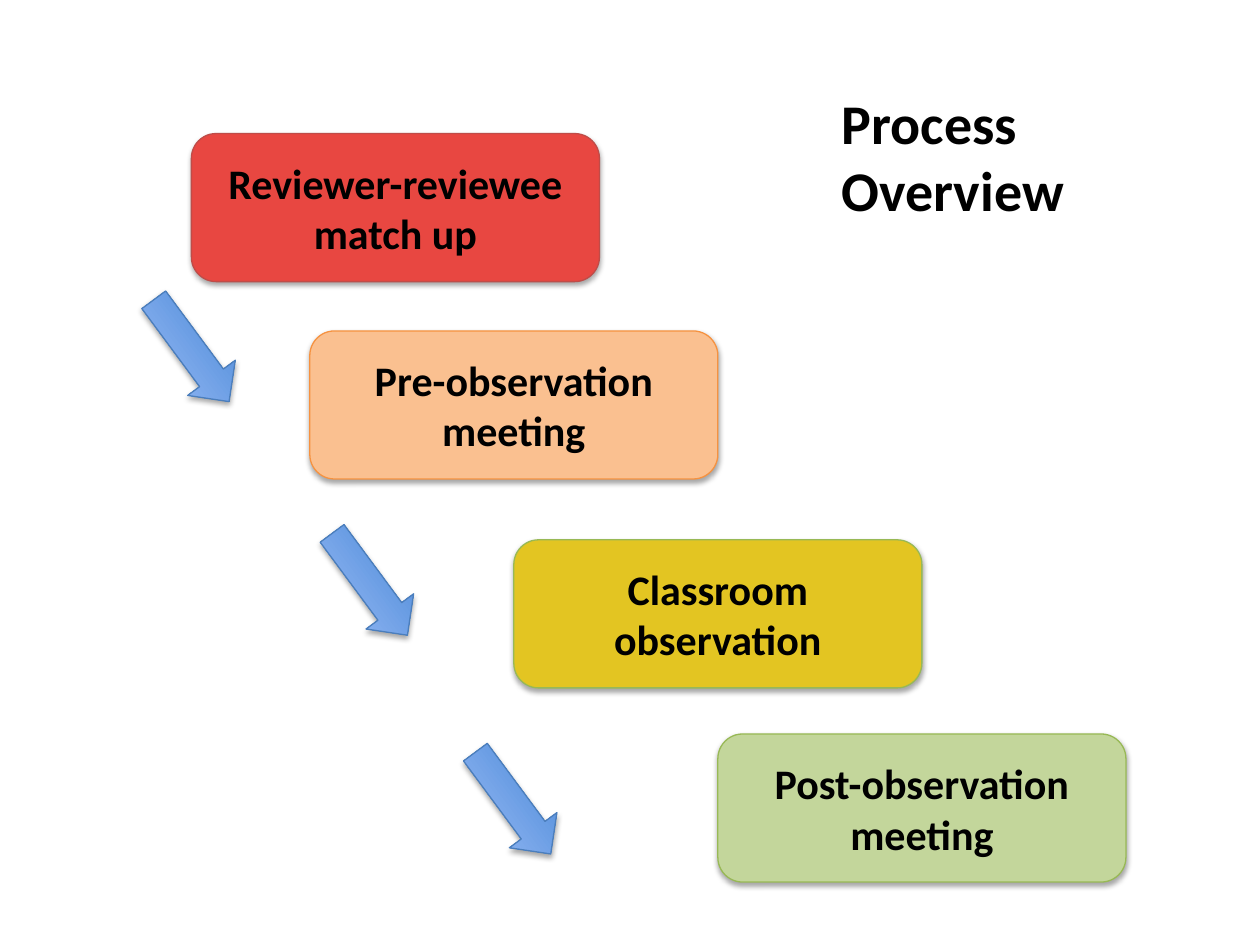
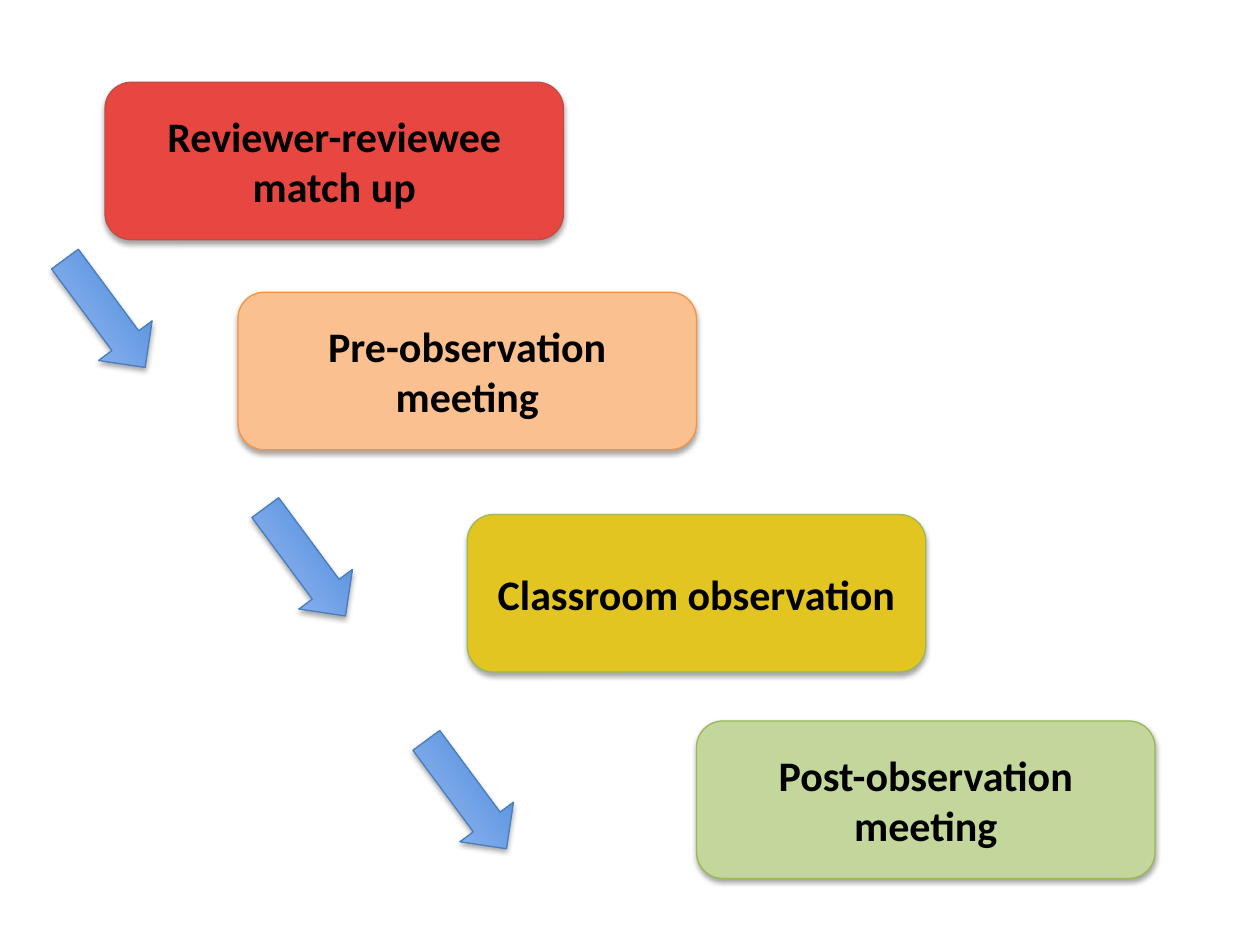
from dataclasses import dataclass

from lxml import etree
from pptx import Presentation
from pptx.dml.color import RGBColor
from pptx.enum.shapes import MSO_SHAPE
from pptx.enum.text import MSO_ANCHOR, PP_ALIGN
from pptx.oxml.ns import qn
from pptx.util import Pt

BOX = MSO_SHAPE.FLOWCHART_ALTERNATE_PROCESS
ARROW = MSO_SHAPE.LEFT_ARROW
CENTER = PP_ALIGN.CENTER
MIDDLE = MSO_ANCHOR.MIDDLE


@dataclass(frozen=True)
class Theme:
    font: str = "Calibri"
    title: int = 32
    body: int = 24
    ink: str = "000000"
    red: str = "E84741"
    brick: str = "BF4C48"
    peach: str = "FAC090"
    orange: str = "F69240"
    gold: str = "E3C522"
    sage: str = "C3D69B"
    green: str = "98B955"
    deep: str = "3F80CE"
    pale: str = "A4C4FF"
    blue: str = "4B7EBC"
    edge: float = 0.75


@dataclass(frozen=True)
class Frame:
    """Maps the full-size flow to a place on a slide."""
    left: float
    top: float
    wide: float = 1
    high: float = 1

    def spot(self, x, y):
        return self.left + x * self.wide, self.top + y * self.high


THEME = Theme()
FULL = Frame(60, 47)
SMALL = Frame(109.4, 76.3, 0.89, 0.94)

# Places are measured from the top left corner of the first box.
BOX_SIZE = 262, 90
STEPS = [
    ("Reviewer-reviewee match up", 0, 0, THEME.red, THEME.brick),
    ("Pre-observation meeting", 76, 120, THEME.peach, THEME.orange),
    ("Classroom observation", 207, 247, THEME.gold, THEME.green),
    ("Post-observation meeting", 338, 365, THEME.sage, THEME.green),
]
ARROW_SIZE = 77, 38
ARROW_TURN = 233.5
ARROW_MIDS = [(0, 132), (114.5, 274), (206.5, 407)]


def rgb(code):
    return RGBColor.from_string(code)


def shade(shape):
    """Give the shape a soft shadow straight below it."""
    shape.shadow.inherit = False
    effects = shape.element.spPr.find(qn("a:effectLst"))
    drop = etree.SubElement(effects, qn("a:outerShdw"), blurRad=str(Pt(3.15)),
                            dist=str(Pt(1.8)), dir="5400000", rotWithShape="0")
    tint = etree.SubElement(drop, qn("a:srgbClr"), val=THEME.ink)
    etree.SubElement(tint, qn("a:alpha"), val="35000")


def add_shape(slide, kind, x, y, wide, high, line):
    shape = slide.shapes.add_shape(kind, Pt(x), Pt(y), Pt(wide), Pt(high))
    shape.line.color.rgb = rgb(line)
    shape.line.width = Pt(THEME.edge)
    shade(shape)
    return shape


def write(frame, text, size):
    frame.word_wrap = True
    para = frame.paragraphs[0]
    para.text = text
    para.font.name = THEME.font
    para.font.size = Pt(size)
    para.font.bold = True
    para.font.color.rgb = rgb(THEME.ink)
    return para


def add_step(slide, frame, text, x, y, fill, line):
    wide, high = BOX_SIZE
    box = add_shape(slide, BOX, *frame.spot(x, y),
                    wide * frame.wide, high * frame.high, line)
    box.fill.solid()
    box.fill.fore_color.rgb = rgb(fill)
    box.text_frame.vertical_anchor = MIDDLE
    write(box.text_frame, text, THEME.body).alignment = CENTER


def add_arrow(slide, frame, x, y):
    """Place an arrow by its middle; its steep turn swaps the two scales."""
    long, thick = ARROW_SIZE[0] * frame.high, ARROW_SIZE[1] * frame.wide
    x, y = frame.spot(x, y)
    arrow = add_shape(slide, ARROW, x - long / 2, y - thick / 2,
                      long, thick, THEME.blue)
    arrow.rotation = ARROW_TURN
    arrow.fill.gradient()
    arrow.fill.gradient_angle = 90
    for stop, code in zip(arrow.fill.gradient_stops, (THEME.deep, THEME.pale)):
        stop.color.rgb = rgb(code)


def add_flow(slide, frame):
    for step in STEPS:
        add_step(slide, frame, *step)
    for mid in ARROW_MIDS:
        add_arrow(slide, frame, *mid)


def add_title(slide, text):
    box = slide.shapes.add_textbox(Pt(473.8), Pt(46.8), Pt(216), Pt(85))
    write(box.text_frame, text, THEME.title)


def main():
    deck = Presentation()
    deck.slide_width, deck.slide_height = Pt(720), Pt(540)
    blank = deck.slide_layouts[6]

    intro = deck.slides.add_slide(blank)
    add_flow(intro, SMALL)
    add_title(intro, "Process Overview")

    add_flow(deck.slides.add_slide(blank), FULL)
    deck.save("out.pptx")


if __name__ == "__main__":
    main()
